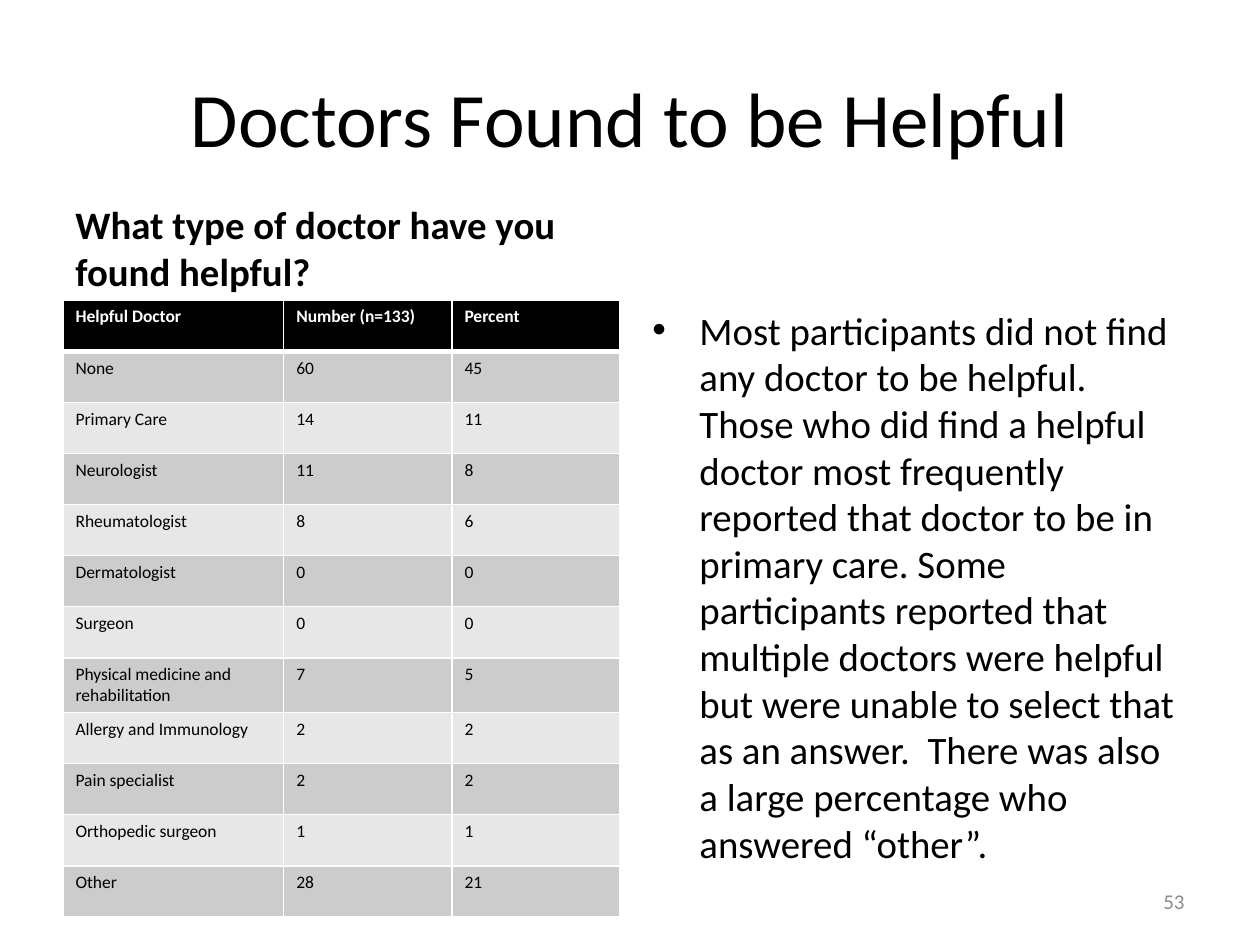
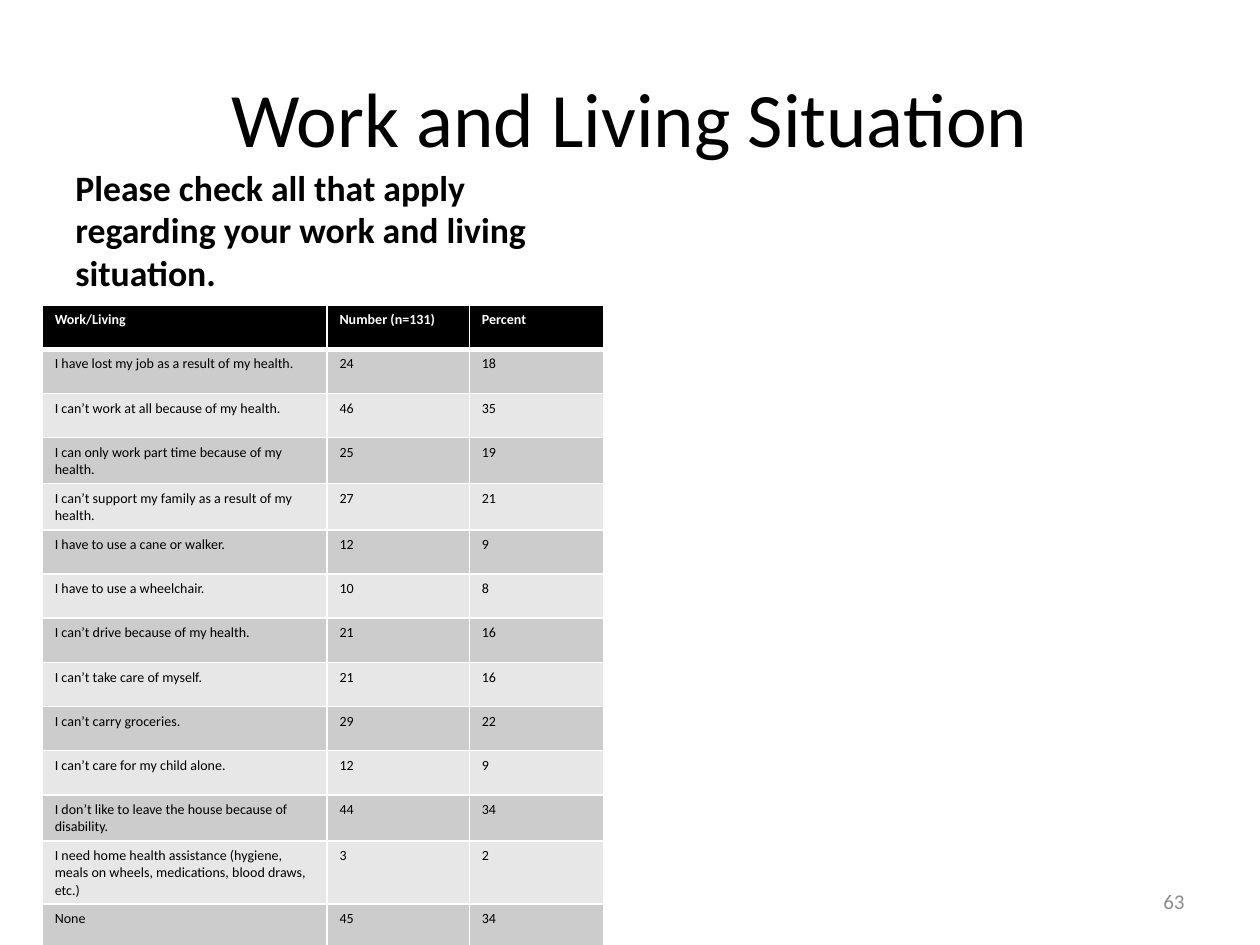
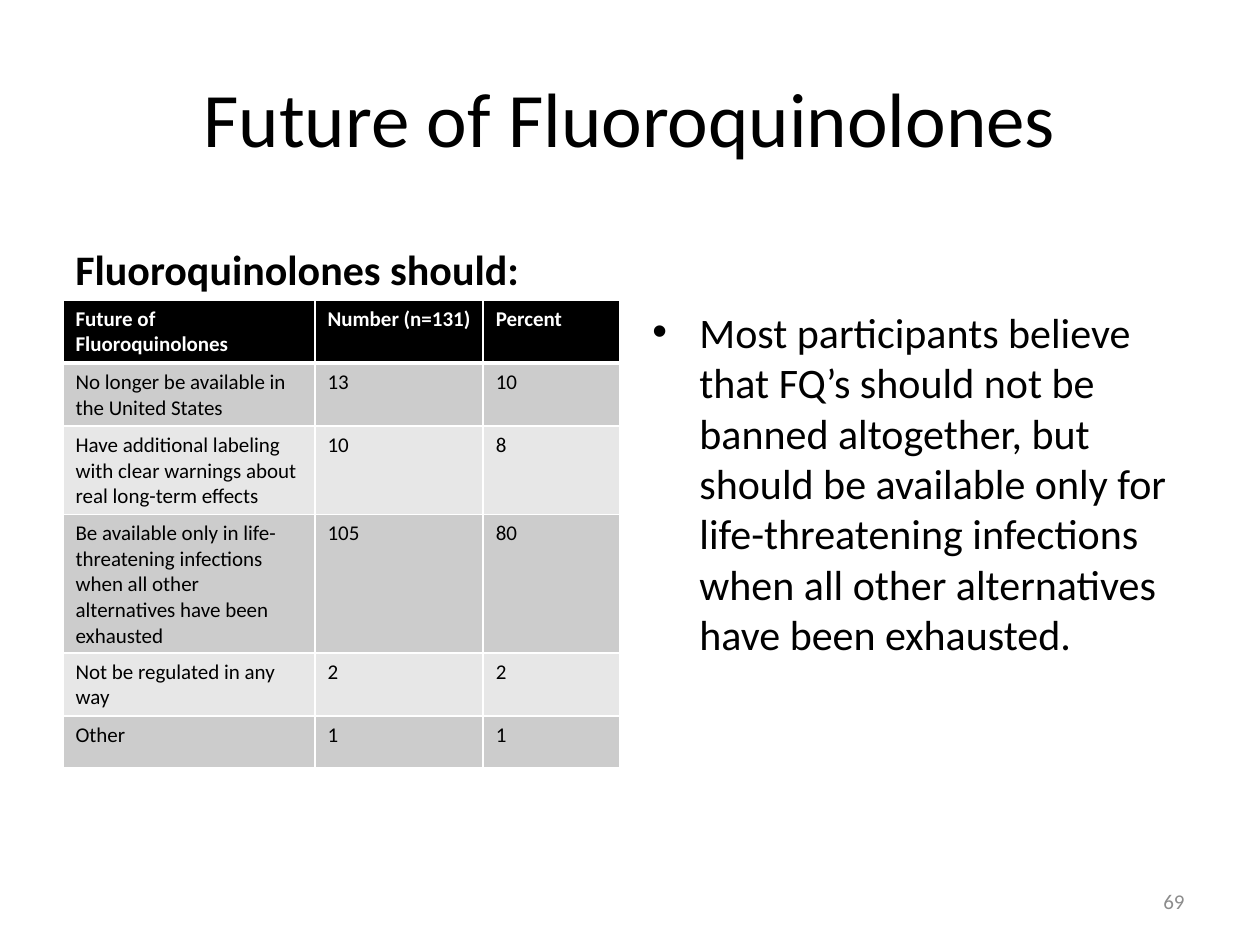
from lxml.etree import SubElement
from pptx import Presentation
from pptx.dml.color import RGBColor
from pptx.enum.text import MSO_ANCHOR, PP_ALIGN
from pptx.oxml.ns import qn
from pptx.util import Cm, Pt

FONT = "Calibri"
BLACK, WHITE, GREY = "000000", "FFFFFF", "8C8C8C"
BANDS = ("CCCCCC", "E7E7E7")

# Boxes shared by the slides: left, top, width, height in cm
TITLE_BOX = (1.27, 0.76, 22.86, 3.18)
QUESTION_BOX = (1.27, 4.27, 11.23, 1.78)
TABLE_CORNER = (1.27, 6.05)
FINDING_BOX = (12.9, 6.05, 11.23, 10.97)
NUMBER_BOX = (18.21, 17.65, 5.92, 1.02)
BULLET_INDENT = 0.95

DOCTORS = [
    ("Helpful Doctor", "Number (n=133)", "Percent"),
    ("None", 60, 45),
    ("Primary Care", 14, 11),
    ("Neurologist", 11, 8),
    ("Rheumatologist", 8, 6),
    ("Dermatologist", 0, 0),
    ("Surgeon", 0, 0),
    ("Physical medicine and rehabilitation", 7, 5),
    ("Allergy and Immunology", 2, 2),
    ("Pain specialist", 2, 2),
    ("Orthopedic surgeon", 1, 1),
    ("Other", 28, 21),
]
WORK_AND_LIVING = [
    ("Work/Living", "Number (n=131)", "Percent"),
    ("I have lost my job as a result of my health.", 24, 18),
    ("I can’t work at all because of my health.", 46, 35),
    ("I can only work part time because of my health.", 25, 19),
    ("I can’t support my family as a result of my health.", 27, 21),
    ("I have to use a cane or walker.", 12, 9),
    ("I have to use a wheelchair.", 10, 8),
    ("I can’t drive because of my health.", 21, 16),
    ("I can’t take care of myself.", 21, 16),
    ("I can’t carry groceries.", 29, 22),
    ("I can’t care for my child alone.", 12, 9),
    ("I don’t like to leave the house because of disability.", 44, 34),
    ("I need home health assistance (hygiene, meals on wheels, "
     "medications, blood draws, etc.)", 3, 2),
    ("None", 45, 34),
]
FUTURE = [
    ("Future of Fluoroquinolones", "Number (n=131)", "Percent"),
    ("No longer be available in the United States", 13, 10),
    ("Have additional labeling with clear warnings about real "
     "long-term effects", 10, 8),
    ("Be available only in life-threatening infections when all other "
     "alternatives have been exhausted", 105, 80),
    ("Not be regulated in any way", 2, 2),
    ("Other", 1, 1),
]
DOCTORS_FINDING = (
    "Most participants did not find any doctor to be helpful.  Those who did "
    "find a helpful doctor most frequently reported that doctor to be in "
    "primary care. Some participants reported that multiple doctors were "
    "helpful but were unable to select that as an answer.  There was also a "
    "large percentage who answered “other”."
)
FUTURE_FINDING = (
    "Most participants believe that FQ’s should not be banned altogether, but "
    "should be available only for life-threatening infections when all other "
    "alternatives have been exhausted."
)


def color(value):
    return RGBColor.from_string(value)


def write(frame, text, size, font_color=BLACK, bold=False, align=PP_ALIGN.LEFT):
    """Put one formatted paragraph in a text frame."""
    paragraph = frame.paragraphs[0]
    paragraph.alignment = align
    run = paragraph.add_run()
    run.text = text
    run.font.name = FONT
    run.font.size = Pt(size)
    run.font.bold = bold
    run.font.color.rgb = color(font_color)
    return paragraph


def add_text(slide, box, text, anchor=MSO_ANCHOR.TOP, **text_format):
    frame = slide.shapes.add_textbox(*map(Cm, box)).text_frame
    frame.word_wrap = True
    frame.vertical_anchor = anchor
    return write(frame, text, **text_format)


def add_bullet(paragraph):
    properties = paragraph._p.get_or_add_pPr()
    properties.set("marL", str(Cm(BULLET_INDENT)))
    properties.set("indent", str(-Cm(BULLET_INDENT)))
    SubElement(properties, qn("a:buFont"), typeface="Arial")
    SubElement(properties, qn("a:buChar"), char="•")


def set_borders(cell, row_index):
    """White grid, with a heavier line below the header."""
    widths = {"L": 1, "R": 1, "T": 3 if row_index == 1 else 1,
              "B": 3 if row_index == 0 else 1}
    properties = cell._tc.get_or_add_tcPr()
    for side, width in widths.items():
        line = SubElement(properties, qn(f"a:ln{side}"), w=str(Pt(width)))
        fill = SubElement(line, qn("a:solidFill"))
        SubElement(fill, qn("a:srgbClr"), val=WHITE)


def add_answer_table(slide, corner, rows, column_widths, row_height, size):
    left, top = corner
    table = slide.shapes.add_table(
        len(rows), len(column_widths), Cm(left), Cm(top),
        Cm(sum(column_widths)), Cm(row_height * len(rows))).table
    for column, width in zip(table.columns, column_widths):
        column.width = Cm(width)
    for row_index, values in enumerate(rows):
        table.rows[row_index].height = Cm(row_height)
        header = row_index == 0
        for column_index, value in enumerate(values):
            cell = table.cell(row_index, column_index)
            set_borders(cell, row_index)
            cell.fill.solid()
            cell.fill.fore_color.rgb = color(
                BLACK if header else BANDS[(row_index - 1) % 2])
            write(cell.text_frame, str(value), size, bold=header,
                  font_color=WHITE if header else BLACK)


def add_survey_slide(presentation, title, question, number, question_size,
                     table, finding=None):
    slide = presentation.slides.add_slide(presentation.slide_layouts[6])
    # Title and survey question
    add_text(slide, TITLE_BOX, title, anchor=MSO_ANCHOR.MIDDLE, size=44,
             align=PP_ALIGN.CENTER)
    add_text(slide, QUESTION_BOX, question, anchor=MSO_ANCHOR.BOTTOM,
             size=question_size, bold=True)
    # Answers on the left, finding on the right
    add_answer_table(slide, **table)
    if finding:
        add_bullet(add_text(slide, FINDING_BOX, finding, size=question_size))
    # Slide number
    add_text(slide, NUMBER_BOX, str(number), anchor=MSO_ANCHOR.MIDDLE, size=12,
             font_color=GREY, align=PP_ALIGN.RIGHT)


def main():
    presentation = Presentation()
    presentation.slide_width, presentation.slide_height = Cm(25.4), Cm(19.05)
    add_survey_slide(
        presentation, "Doctors Found to be Helpful",
        "What type of doctor have you found helpful?", 53, 22.2,
        dict(corner=TABLE_CORNER, rows=DOCTORS, row_height=1.03, size=10,
             column_widths=(4.45, 3.39, 3.39)),
        DOCTORS_FINDING)
    add_survey_slide(
        presentation, "Work and Living Situation",
        "Please check all that apply regarding your work and living situation.",
        63, 20.4,
        dict(corner=(0.85, 6.15), rows=WORK_AND_LIVING, row_height=0.89, size=8,
             column_widths=(5.74, 2.87, 2.72)))
    add_survey_slide(
        presentation, "Future of Fluoroquinolones",
        "Fluoroquinolones should:", 69, 24,
        dict(corner=TABLE_CORNER, rows=FUTURE, row_height=1.03, size=12,
             column_widths=(5.08, 3.39, 2.76)),
        FUTURE_FINDING)
    presentation.save("out.pptx")


if __name__ == "__main__":
    main()
